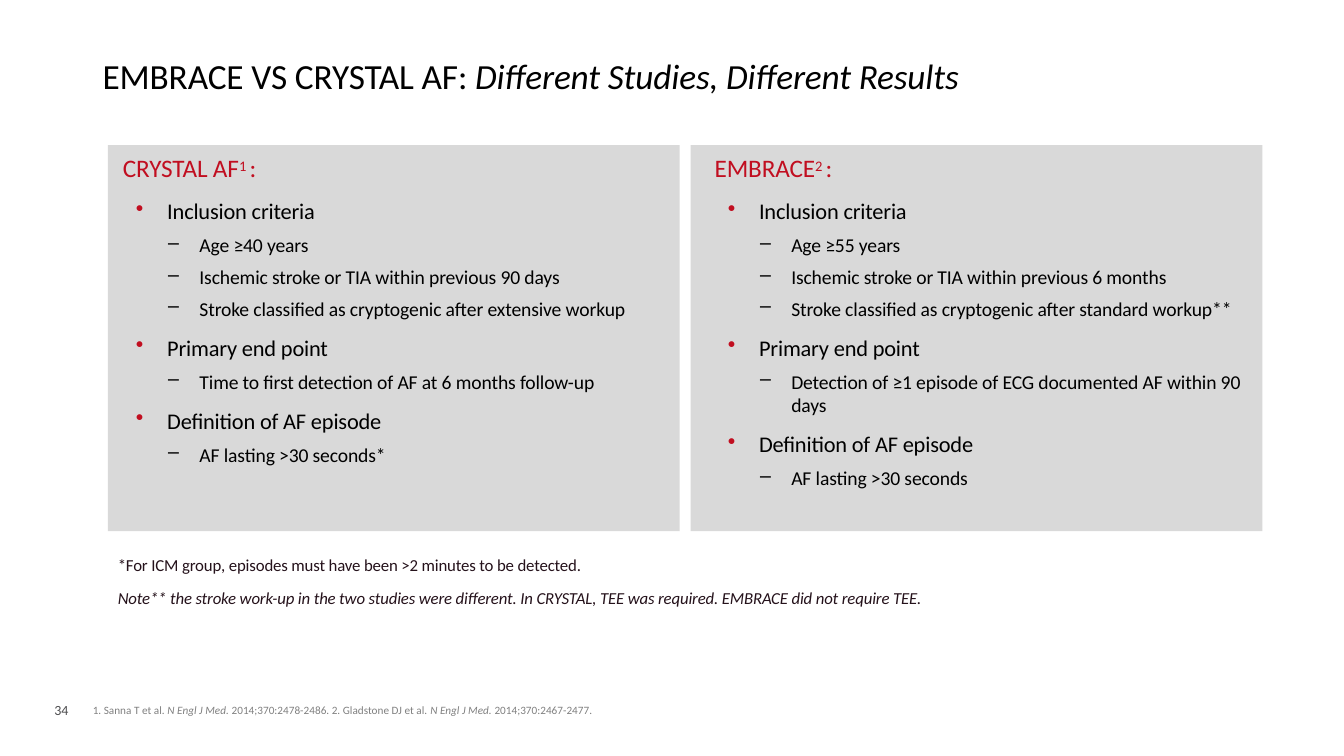
"""Build the EMBRACE versus CRYSTAL AF study comparison slide."""
from dataclasses import dataclass
from typing import Optional

from lxml import etree
from pptx import Presentation
from pptx import util as u
from pptx.dml.color import RGBColor
from pptx.enum import shapes, text
from pptx.oxml import ns

FONT = "Calibri"
BLACK = RGBColor(0x00, 0x00, 0x00)
RED = RGBColor(0xC1, 0x0E, 0x20)
PANEL_GRAY = RGBColor(0xD9, 0xD9, 0xD9)
NUMBER_GRAY = RGBColor(0x4D, 0x4D, 0x4F)
CITATION_GRAY = RGBColor(0x80, 0x80, 0x80)
NOTE_COLOR = RGBColor(0x25, 0x12, 0x1B)

PANEL_TOP, PANEL_WIDTH, PANEL_HEIGHT = 1.44, 5.67, 3.83
BODY_TOP, BODY_HEIGHT = 1.5, 4.94


@dataclass(frozen=True)
class Piece:
    text: str
    italic: bool = False
    superscript: bool = False


@dataclass(frozen=True)
class Style:
    size: float
    color: RGBColor
    spacing: int = 0
    line_spacing: Optional[float] = None
    space_before: float = 0
    level: int = 0
    bullet: str = ""
    bullet_color: Optional[RGBColor] = None
    margin: float = 0


@dataclass(frozen=True)
class Topic:
    title: str
    details: tuple[str, ...]


@dataclass(frozen=True)
class Study:
    panel_left: float
    body_left: float
    body_width: float
    heading: tuple[Piece, ...]
    topics: tuple[Topic, ...]


TITLE = Style(25.2, BLACK, -10, 0.9)
HEADING = Style(18, RED, -10, 0.9)
TOPIC = Style(16, BLACK, -10, 0.9, 12, 0, "•", RED, 0.44)
DETAIL = Style(14, BLACK, -10, None, 6, 1, "–", None, 0.76)
NOTE = Style(12, NOTE_COLOR, -10)
SECOND_NOTE = Style(12, NOTE_COLOR, -10, space_before=9.6)
NUMBER = Style(10, NUMBER_GRAY)
CITATION = Style(8, CITATION_GRAY)
HANGING = -0.31

STUDIES = (
    Study(1.07, 1.12, 5.75,
          (Piece("CRYSTAL AF"), Piece("1 ", superscript=True), Piece(":")),
          (Topic("Inclusion criteria",
                 ("Age ≥40 years",
                  "Ischemic stroke or TIA within previous 90 days",
                  "Stroke classified as cryptogenic after extensive workup")),
           Topic("Primary end point",
                 ("Time to first detection of AF at 6 months follow-up",)),
           Topic("Definition of AF episode", ("AF lasting >30 seconds*",)))),
    Study(6.85, 6.99, 5.53,
          (Piece("EMBRACE"), Piece("2 ", superscript=True), Piece(":")),
          (Topic("Inclusion criteria",
                 ("Age ≥55 years",
                  "Ischemic stroke or TIA within previous 6 months",
                  "Stroke classified as cryptogenic after standard workup**")),
           Topic("Primary end point",
                 ("Detection of ≥1 episode of ECG documented AF within 90 days",)),
           Topic("Definition of AF episode", ("AF lasting >30 seconds",)))),
)


def add_bullet(paragraph, style: Style) -> None:
    """Give a paragraph a hanging bullet."""
    properties = paragraph._p.get_or_add_pPr()
    properties.set("marL", str(u.Inches(style.margin)))
    properties.set("indent", str(u.Inches(HANGING)))
    if style.bullet_color is not None:
        color = etree.SubElement(properties, ns.qn("a:buClr"))
        etree.SubElement(color, ns.qn("a:srgbClr")).set("val", str(style.bullet_color))
    etree.SubElement(properties, ns.qn("a:buChar")).set("char", style.bullet)


def write(paragraph, pieces: tuple[Piece, ...], style: Style) -> None:
    """Fill one paragraph with styled runs."""
    if style.bullet:
        add_bullet(paragraph, style)
    paragraph.level = style.level
    paragraph.space_before = u.Pt(style.space_before)
    if style.line_spacing is not None:
        paragraph.line_spacing = style.line_spacing
    for piece in pieces:
        run = paragraph.add_run()
        run.text = piece.text
        run.font.name = FONT
        run.font.size = u.Pt(style.size)
        run.font.color.rgb = style.color
        run.font.italic = piece.italic
        properties = run._r.get_or_add_rPr()
        if style.spacing:
            properties.set("spc", str(style.spacing))
        if piece.superscript:
            properties.set("baseline", "25000")


def add_text(slide, left: float, top: float, width: float, height: float,
             lines: list[tuple[tuple[Piece, ...], Style]], wrap: bool = True):
    """Add a text box holding the given paragraphs and return its frame."""
    frame = slide.shapes.add_textbox(
        u.Inches(left), u.Inches(top), u.Inches(width), u.Inches(height)).text_frame
    frame.word_wrap = wrap
    for index, (pieces, style) in enumerate(lines):
        paragraph = frame.add_paragraph() if index else frame.paragraphs[0]
        write(paragraph, pieces, style)
    return frame


def add_panel(slide, study: Study) -> None:
    """Draw the gray panel behind a study."""
    panel = slide.shapes.add_shape(
        shapes.MSO_SHAPE.RECTANGLE, u.Inches(study.panel_left), u.Inches(PANEL_TOP),
        u.Inches(PANEL_WIDTH), u.Inches(PANEL_HEIGHT))
    panel.shadow.inherit = False
    panel.fill.solid()
    panel.fill.fore_color.rgb = PANEL_GRAY
    panel.line.fill.background()


def add_study(slide, study: Study) -> None:
    """Write a study's heading, topics and details."""
    lines = [(study.heading, HEADING)]
    for topic in study.topics:
        lines.append(((Piece(topic.title),), TOPIC))
        lines.extend(((Piece(detail),), DETAIL) for detail in topic.details)
    add_text(slide, study.body_left, BODY_TOP, study.body_width, BODY_HEIGHT, lines)


def main() -> None:
    """Build and save the presentation."""
    presentation = Presentation()
    presentation.slide_width = u.Inches(13.33)
    presentation.slide_height = u.Inches(7.5)
    slide = presentation.slides.add_slide(presentation.slide_layouts[6])

    add_text(slide, 0.44, 6.91, 0.39, 0.27, [((Piece("34"),), NUMBER)], wrap=False)
    title = add_text(slide, 0.92, 0.4, 11.5, 0.61, [(
        (Piece("EMBRACE VS CRYSTAL AF: "),
         Piece("Different Studies, Different Results", italic=True)), TITLE)])
    title.vertical_anchor = text.MSO_ANCHOR.BOTTOM

    for study in STUDIES:
        add_panel(slide, study)
    for study in STUDIES:
        add_study(slide, study)

    add_text(slide, 1.07, 5.45, 10.3, 0.65, [
        ((Piece("*For ICM group, episodes must have been >2 minutes to be detected."),), NOTE),
        ((Piece("Note** the stroke work-up in the two studies were different. In CRYSTAL, "
                "TEE was required. EMBRACE did not require TEE.", italic=True),), SECOND_NOTE)])

    journal = Piece("N Engl J Med. ", italic=True)
    citation = add_text(slide, 0.92, 6.98, 9.38, 0.13, [(
        (Piece("1. Sanna T et al. "), journal,
         Piece("2014;370:2478-2486. 2. Gladstone DJ et al. "), journal,
         Piece("2014;370:2467-2477.")), CITATION)])
    citation.margin_left = citation.margin_right = u.Inches(0)
    citation.margin_top = citation.margin_bottom = u.Inches(0)

    presentation.save("out.pptx")


if __name__ == "__main__":
    main()
